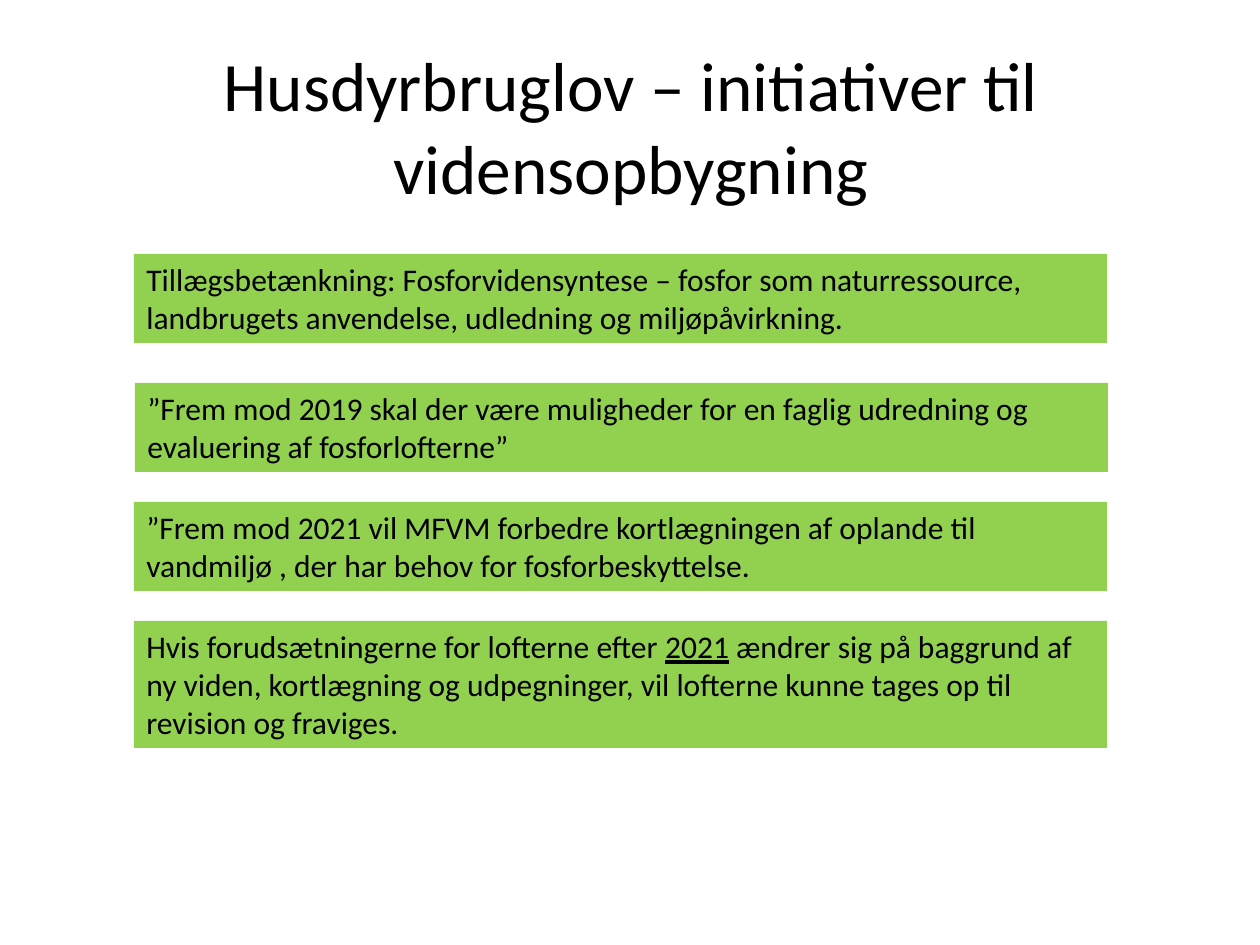
import pptx
import pptx.dml.color
import pptx.enum.shapes
import pptx.enum.text
import pptx.util

BLACK = pptx.dml.color.RGBColor(0x00, 0x00, 0x00)
GREEN = pptx.dml.color.RGBColor(0x92, 0xD0, 0x50)
SCALE = 914400 / 126


def px(n):
    return pptx.util.Emu(round(n * SCALE))


class Page:
    font = "Calibri"
    color = BLACK
    fill = GREEN

    def __init__(self, deck):
        self.slide = deck.slides.add_slide(deck.slide_layouts[6])

    def style(self, para, size, align):
        para.alignment = align
        for run in para.runs:
            run.font.name = self.font
            run.font.size = pptx.util.Pt(size)
            run.font.color.rgb = self.color

    def title(self, text, x, y, w, h, foot):
        box = self.slide.shapes.add_textbox(px(x), px(y), px(w), px(h))
        frame = box.text_frame
        frame.text = text
        frame.word_wrap = True
        frame.auto_size = pptx.enum.text.MSO_AUTO_SIZE.NONE
        frame.vertical_anchor = pptx.enum.text.MSO_ANCHOR.MIDDLE
        frame.margin_bottom = px(foot)
        self.style(frame.paragraphs[0], 39.6, pptx.enum.text.PP_ALIGN.CENTER)

    def panel(self, parts, x, y, w, h):
        rect = pptx.enum.shapes.MSO_SHAPE.RECTANGLE
        box = self.slide.shapes.add_shape(rect, px(x), px(y), px(w), px(h))
        box.shadow.inherit = False
        box.fill.solid()
        box.fill.fore_color.rgb = self.fill
        box.line.fill.background()
        frame = box.text_frame
        frame.word_wrap = True
        frame.auto_size = pptx.enum.text.MSO_AUTO_SIZE.SHAPE_TO_FIT_TEXT
        frame.vertical_anchor = pptx.enum.text.MSO_ANCHOR.TOP
        para = frame.paragraphs[0]
        for text, under in parts:
            run = para.add_run()
            run.text = text
            if under:
                run.font.underline = True
        self.style(para, 18, pptx.enum.text.PP_ALIGN.LEFT)


PANELS = [
    (134, 254, 89, [("Tillægsbetænkning: Fosforvidensyntese – fosfor som naturressource, "
                     "landbrugets anvendelse, udledning og miljøpåvirkning.", False)]),
    (135, 383, 89, [("”Frem mod 2019 skal der være muligheder for en faglig udredning og "
                     "evaluering af fosforlofterne”", False)]),
    (134, 502, 89, [("”Frem mod 2021 vil MFVM forbedre kortlægningen af oplande til "
                     "vandmiljø , der har behov for fosforbeskyttelse.", False)]),
    (134, 621, 127, [("Hvis forudsætningerne for lofterne efter ", False),
                     ("2021", True),
                     (" ændrer sig på baggrund af ny viden, kortlægning og udpegninger, "
                      "vil lofterne kunne tages op til revision og fraviges.", False)]),
]


def main():
    deck = pptx.Presentation()
    deck.slide_width = px(1260)
    deck.slide_height = px(945)
    page = Page(deck)
    page.title("Husdyrbruglov – initiativer til vidensopbygning", 64, 86, 1134, 157, 84)
    for x, y, h, parts in PANELS:
        page.panel(parts, x, y, 973, h)
    deck.save("out.pptx")


if __name__ == "__main__":
    main()
